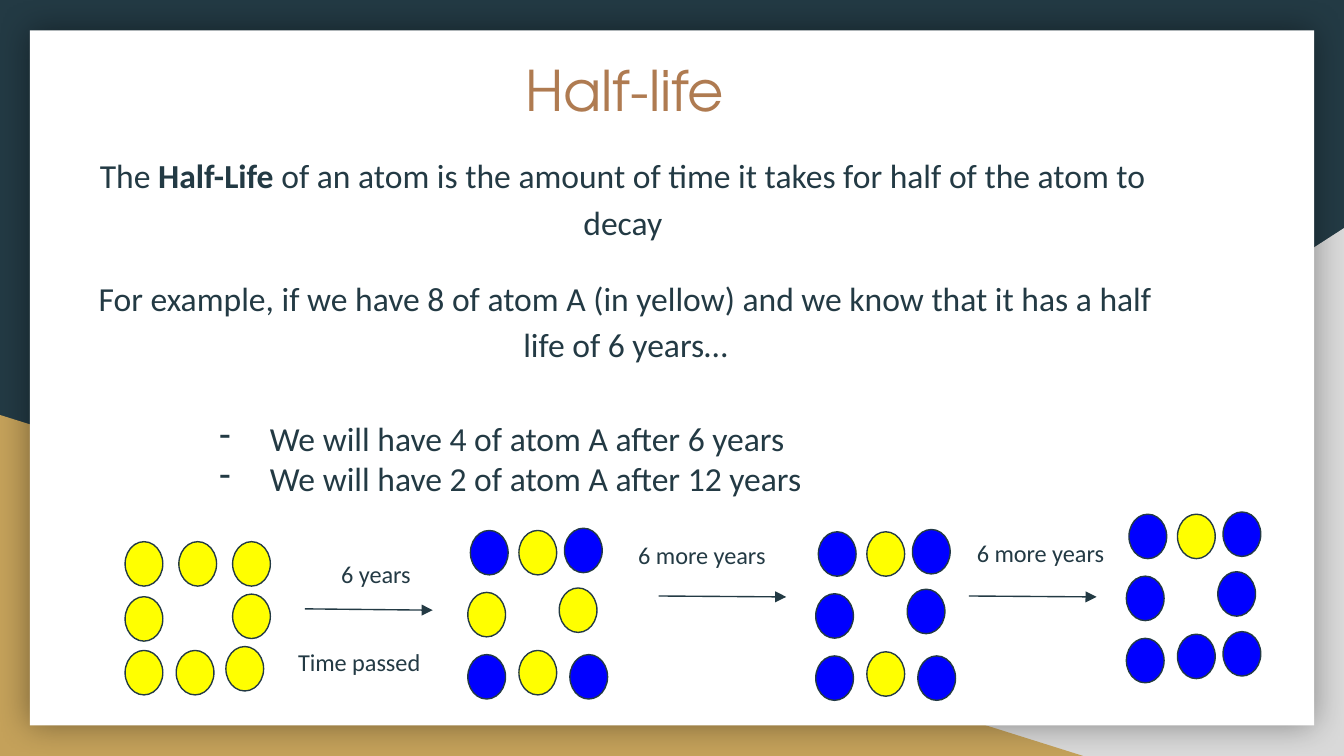
"""Build a slide that explains half-life with groups of decaying atoms."""
from lxml import etree
from pptx import Presentation
from pptx.dml.color import RGBColor
from pptx.enum import shapes, text
from pptx.oxml import ns
from pptx.util import Pt

DARK, GREY, GOLD, WHITE, BROWN = "233A44", "D9D9D9", "C4A15A", "FFFFFF", "AF7B51"
ATOM_COLORS = {"Y": "FFFF00", "B": "0000FF"}
ATOM_SIZE = (20.2, 23.8)

TITLE = [["Half-life"]]
DEFINITION = [["The ", "*Half-Life", " of an atom is the amount of time it takes for half of the atom to decay"]]
EXAMPLE = [["For example, if we have 8 of atom A (in yellow) and we know that it has a half life of 6 years…"]]
RESULTS = [["We will have 4 of atom A after 6 years"], ["We will have 2 of atom A after 12 years"]]

LABELS = [
    ("6 years", 175.7, 292.3, 57),
    ("Time passed", 152.6, 339.8, 86.4),
    ("6 more years", 334.8, 282.2, 98),
    ("6 more years", 516.2, 281.2, 98),
]
ARROWS = [(163.4, 326.2, 326.9), (352.8, 319.3, 319.8), (519.1, 319.3, 319.8)]
ARROW_LENGTH = 68.4

START_RING = [(0, 0), (28.8, 0), (57.6, 0), (0, 29.5), (57.6, 28.1), (0, 58.3), (27.4, 58.3), (54, 56.2)]
DECAY_RING = [(1.4, 1.2), (27.4, 1.2), (51.8, 0), (0, 34.4), (49, 32), (0, 67.7), (27.4, 65.5), (54.7, 67.7)]
LAST_RING = DECAY_RING[:-1] + [(51.8, 64.1)]
GROUPS = [
    (67, 290.2, START_RING, "YYYYYYYY"),
    (250.6, 283, DECAY_RING, "BYBYYBYB"),
    (437, 283.7, DECAY_RING, "BYBBBBYB"),
    (603.4, 274.3, LAST_RING, "BYBBBBBB"),
]


def color(value):
    """Turn a hex string into a colour."""
    return RGBColor.from_string(value)


def add_xml(parent, tag, **attributes):
    """Append a DrawingML child element."""
    return etree.SubElement(parent, ns.qn(f"a:{tag}"), attributes)


def add_filled(slide, kind, left, top, width, height, fill, line=None):
    """Add a flat preset shape."""
    shape = slide.shapes.add_shape(kind, Pt(left), Pt(top), Pt(width), Pt(height))
    shape.shadow.inherit = False
    shape.fill.solid()
    shape.fill.fore_color.rgb = color(fill)
    if line:
        shape.line.color.rgb = color(line)
        shape.line.width = Pt(0.75)
    else:
        shape.line.fill.background()
    return shape


def add_text(slide, paragraphs, left, top, width, height, size, font="Calibri", fill=DARK):
    """Add a text box, with starred runs in bold, and return its paragraphs."""
    frame = slide.shapes.add_textbox(Pt(left), Pt(top), Pt(width), Pt(height)).text_frame
    frame.word_wrap = True
    frame.margin_left = frame.margin_right = frame.margin_top = frame.margin_bottom = Pt(7.2)
    for index, runs in enumerate(paragraphs):
        paragraph = frame.add_paragraph() if index else frame.paragraphs[0]
        paragraph.font.size = Pt(size)
        paragraph.font.name = font
        paragraph.font.color.rgb = color(fill)
        for words in runs:
            run = paragraph.add_run()
            run.text = words.lstrip("*")
            if words.startswith("*"):
                run.font.bold = True
    return frame.paragraphs


def add_background(slide):
    """Draw the coloured corners and the white panel with its soft shadow."""
    slide.background.fill.solid()
    slide.background.fill.fore_color.rgb = color(DARK)
    triangle = shapes.MSO_SHAPE.RIGHT_TRIANGLE
    corner = add_filled(slide, triangle, 282.2, 122.2, 437.8, 282.8, GREY)
    corner._element.spPr.find(ns.qn("a:xfrm")).set("flipH", "1")
    add_filled(slide, triangle, 0, 222.3, 580.3, 182.7, GOLD)
    panel = add_filled(slide, shapes.MSO_SHAPE.RECTANGLE, 16, 16.3, 688, 372.4, WHITE)
    effects = panel._element.spPr.find(ns.qn("a:effectLst"))
    shadow = add_xml(effects, "outerShdw", blurRad=str(Pt(18)), dist="0", dir="0", algn="ctr", rotWithShape="0")
    add_xml(add_xml(shadow, "srgbClr", val="000000"), "alpha", val="40000")


def add_arrow(slide, left, start, end):
    """Draw a time arrow pointing right."""
    arrow = slide.shapes.add_connector(
        shapes.MSO_CONNECTOR.STRAIGHT, Pt(left), Pt(start), Pt(left + ARROW_LENGTH), Pt(end))
    arrow.line.color.rgb = color(DARK)
    arrow.line.width = Pt(0.75)
    add_xml(arrow.line._get_or_add_ln(), "tailEnd", type="triangle")
    add_xml(arrow._element.spPr, "effectLst")


def main():
    """Compose and save the slide."""
    presentation = Presentation()
    presentation.slide_width, presentation.slide_height = Pt(720), Pt(405)
    slide = presentation.slides.add_slide(presentation.slide_layouts[6])
    add_background(slide)
    add_text(slide, TITLE, 274.3, 22.3, 400, 75, 30, "TeX Gyre Adventor", BROWN)
    for content, left, top in [(DEFINITION, 38.2, 72.7), (EXAMPLE, 39.6, 138.2)]:
        for paragraph in add_text(slide, content, left, top, 591, 78.5, 18):
            paragraph.alignment = text.PP_ALIGN.CENTER
            paragraph.line_spacing = 1.15
            paragraph.space_after = Pt(12)
    for paragraph in add_text(slide, RESULTS, 101.5, 216.7, 401, 58.3, 18):
        properties = paragraph._p.get_or_add_pPr()
        properties.set("marL", str(Pt(36)))
        properties.set("indent", str(-Pt(27)))
        bullet = etree.Element(ns.qn("a:buChar"), char="-")
        properties.insert(0, bullet)
    for words, left, top, width in LABELS:
        add_text(slide, [[words]], left, top, width, 30.2, 13)
    for arrow in ARROWS:
        add_arrow(slide, *arrow)
    for left, top, ring, atoms in GROUPS:
        for (across, down), atom in zip(ring, atoms):
            add_filled(slide, shapes.MSO_SHAPE.OVAL, left + across, top + down, *ATOM_SIZE, ATOM_COLORS[atom], DARK)
    presentation.save("out.pptx")


if __name__ == "__main__":
    main()
